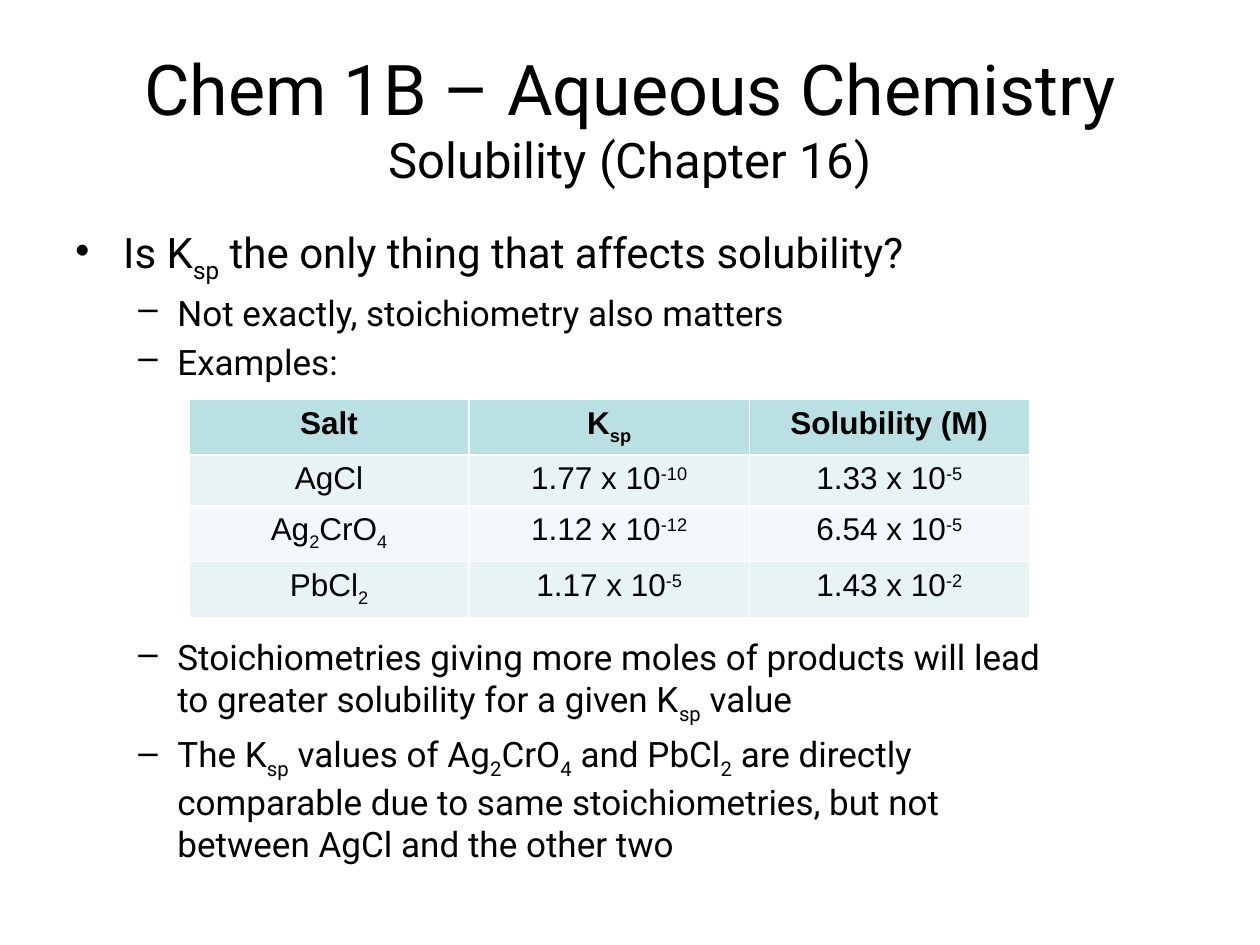
from dataclasses import dataclass

from lxml import etree
from pptx import Presentation
from pptx import util as u
from pptx.dml.color import RGBColor
from pptx.enum import text
from pptx.oxml import ns


@dataclass(frozen=True)
class Theme:
    body_font: str = "Roboto"
    table_font: str = "Arial"
    ink: RGBColor = RGBColor(0, 0, 0)
    header_fill: RGBColor = RGBColor(0xBB, 0xE0, 0xE3)
    row_fills: tuple = (RGBColor(0xE7, 0xF3, 0xF4), RGBColor(0xF3, 0xF9, 0xFA))
    title_size: int = 40
    subtitle_size: int = 28
    level_sizes: tuple = (24, 20)
    table_size: int = 18


LEVELS = (("•", 0.38, -0.38), ("–", 0.81, -0.31))
BASELINES = {"_": "-25000", "^": "30000"}
TABLE_GAP = 145

BULLETS = [
    (0, "Is K|_sp| the only thing that affects solubility?", 5),
    (1, "Not exactly, stoichiometry also matters", 4),
    (1, "Examples:", 4),
    (1, "Stoichiometries giving more moles of products will lead to greater "
        "solubility for a given K|_sp| value", TABLE_GAP),
    (1, "The K|_sp| values of Ag|_2|CrO|_4| and PbCl|_2| are directly comparable "
        "due to same stoichiometries, but not between AgCl and the other two", 4),
]

SALTS = [
    ("Salt", "K|_sp", "Solubility (M)"),
    ("AgCl", "1.77 x 10|^-10", "1.33 x 10|^-5"),
    ("Ag|_2|CrO|_4", "1.12 x 10|^-12", "6.54 x 10|^-5"),
    ("PbCl|_2", "1.17 x 10|^-5", "1.43 x 10|^-2"),
]


class SlideWriter:
    def __init__(self, page, theme):
        self.page = page
        self.theme = theme

    def set_font(self, para, name, size, bold=False):
        para.font.name = name
        para.font.size = u.Pt(size)
        para.font.bold = bold
        para.font.color.rgb = self.theme.ink

    def add_spans(self, para, marked):
        for piece in marked.split("|"):
            span = para.add_run()
            baseline = BASELINES.get(piece[0])
            span.text = piece[1:] if baseline else piece
            if baseline:
                span.font._element.set("baseline", baseline)

    def title(self, heading, subtitle, left, top, width, height):
        box = self.page.shapes.title
        box.left, box.top = u.Inches(left), u.Inches(top)
        box.width, box.height = u.Inches(width), u.Inches(height)
        frame = box.text_frame
        frame.auto_size = text.MSO_AUTO_SIZE.NONE
        frame.vertical_anchor = text.MSO_ANCHOR.MIDDLE
        para = frame.paragraphs[0]
        para.alignment = text.PP_ALIGN.CENTER
        self.set_font(para, self.theme.body_font, self.theme.title_size)
        self.add_spans(para, heading)
        para.add_line_break()
        span = para.add_run()
        span.text = subtitle
        span.font.size = u.Pt(self.theme.subtitle_size)

    def bullets(self, items, left, top, width, height):
        box = self.page.shapes.add_textbox(*map(u.Inches, (left, top, width, height)))
        frame = box.text_frame
        frame.word_wrap = True
        for index, (level, marked, space) in enumerate(items):
            para = frame.add_paragraph() if index else frame.paragraphs[0]
            para.level = level
            para.space_before = u.Pt(space)
            self.set_font(para, self.theme.body_font, self.theme.level_sizes[level])
            self.add_bullet(para, *LEVELS[level])
            self.add_spans(para, marked)

    def add_bullet(self, para, symbol, margin, indent):
        properties = para._p.get_or_add_pPr()
        properties.set("marL", str(u.Inches(margin)))
        properties.set("indent", str(u.Inches(indent)))
        bullet = etree.Element(ns.qn("a:buChar"), char=symbol)
        properties.find(ns.qn("a:defRPr")).addprevious(bullet)

    def table(self, rows, left, top, width, height):
        frame = self.page.shapes.add_table(
            len(rows), len(rows[0]), *map(u.Inches, (left, top, width, height)))
        for row_index, row in enumerate(rows):
            header = row_index == 0
            fills = self.theme.row_fills
            fill = self.theme.header_fill if header else fills[(row_index - 1) % len(fills)]
            for column_index, marked in enumerate(row):
                cell = frame.table.cell(row_index, column_index)
                cell.fill.solid()
                cell.fill.fore_color.rgb = fill
                para = cell.text_frame.paragraphs[0]
                para.alignment = text.PP_ALIGN.CENTER
                self.set_font(para, self.theme.table_font, self.theme.table_size, header)
                self.add_spans(para, marked)


def main():
    deck = Presentation()
    deck.slide_width, deck.slide_height = u.Inches(10), u.Inches(7.5)
    page = deck.slides.add_slide(deck.slide_layouts[5])
    writer = SlideWriter(page, Theme())
    writer.title("Chem 1B – Aqueous Chemistry", "Solubility (Chapter 16)", 0.5, 0.3, 9, 1.25)
    writer.bullets(BULLETS, 0.5, 1.75, 8.17, 5.17)
    writer.table(SALTS, 1.5, 3.17, 6.67, 1.62)
    deck.save("out.pptx")


if __name__ == "__main__":
    main()
